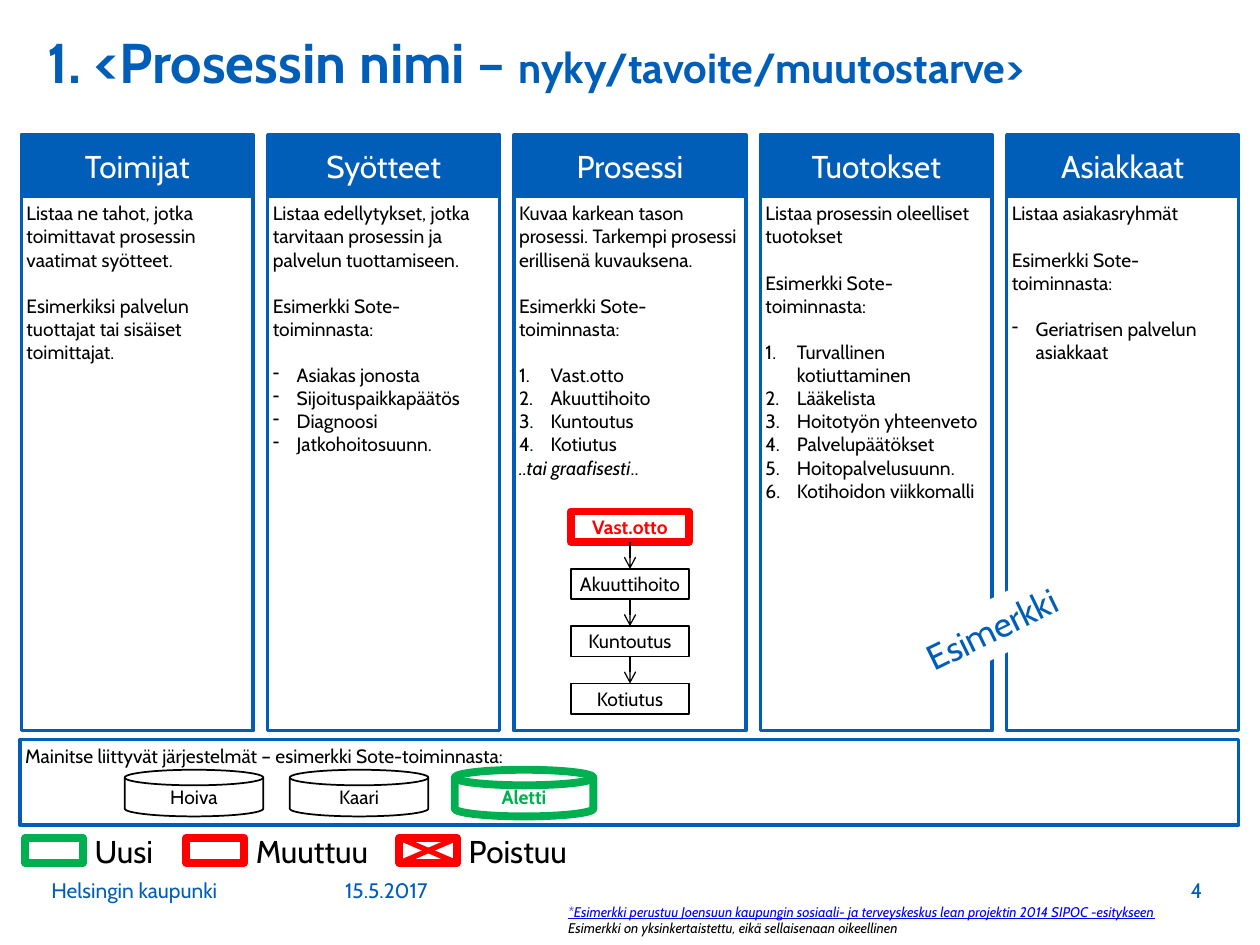
from dataclasses import dataclass

from lxml.etree import SubElement
from pptx import Presentation
from pptx.dml.color import RGBColor
from pptx.enum.dml import MSO_PATTERN
from pptx.enum.shapes import MSO_CONNECTOR, MSO_SHAPE
from pptx.enum.text import MSO_ANCHOR, PP_ALIGN
from pptx.oxml.ns import qn
from pptx.util import Inches, Pt

COLORS = {"blue": "005EB8", "white": "FFFFFF", "black": "000000",
          "green": "00B050", "red": "FF0000", "link": "0000FF"}
FONT = "Cabin"
SMALL_INSET = 0.04

# Grid of the five columns
LEFT, PITCH, COLUMN_WIDTH = 0.17, 1.955, 1.84
HEADER_TOP, HEADER_HEIGHT, BODY_HEIGHT = 1.07, 0.49, 4.24
LINE_GAP = 13.2  # one text line at 11 points


@dataclass
class Column:
    header: str
    intro: str
    example: str
    items: tuple = ()
    numbered: bool = False
    closing: tuple = ()


@dataclass
class Node:
    text: str
    color: str = "black"
    line_width: float = 1

    @property
    def bold(self) -> bool:
        return self.color != "black"


@dataclass
class LegendEntry:
    text: str
    left: float
    text_width: float
    color: str
    crossed: bool = False


EXAMPLE = "Esimerkki Sote-toiminnasta:"
COLUMNS = [
    Column("Toimijat", "Listaa ne tahot, jotka toimittavat prosessin vaatimat syötteet.",
           "Esimerkiksi palvelun tuottajat tai sisäiset toimittajat."),
    Column("Syötteet", "Listaa edellytykset, jotka tarvitaan prosessin ja palvelun tuottamiseen.",
           EXAMPLE, ("Asiakas jonosta", "Sijoituspaikkapäätös", "Diagnoosi", "Jatkohoitosuunn.")),
    Column("Prosessi", "Kuvaa karkean tason prosessi. Tarkempi prosessi erillisenä kuvauksena.",
           EXAMPLE, ("Vast.otto", "Akuuttihoito", "Kuntoutus", "Kotiutus"), True,
           ("..tai graafisesti", "..")),
    Column("Tuotokset", "Listaa prosessin oleelliset tuotokset", EXAMPLE,
           ("Turvallinen kotiuttaminen", "Lääkelista", "Hoitotyön yhteenveto",
            "Palvelupäätökset", "Hoitopalvelusuunn.", "Kotihoidon viikkomalli"), True),
    Column("Asiakkaat", "Listaa asiakasryhmät", EXAMPLE, ("Geriatrisen palvelun asiakkaat",)),
]
STEPS = [Node("Vast.otto", "red", 4.5), Node("Akuuttihoito"), Node("Kuntoutus"), Node("Kotiutus")]
SYSTEMS = [Node("Hoiva"), Node("Kaari"), Node("Aletti", "green", 4.5)]
LEGEND = [LegendEntry("Uusi", 0.2, 0.51, "green"), LegendEntry("Muuttuu", 1.48, 1.01, "red"),
          LegendEntry("Poistuu", 3.17, 0.88, "red", True)]


def rgb(name: str) -> RGBColor:
    return RGBColor.from_string(COLORS[name])


def add_run(paragraph, text: str, size=11, color="black", bold=False, italic=False,
            underline=False) -> None:
    run = paragraph.add_run()
    run.text = text
    font = run.font
    font.name, font.size = FONT, Pt(size)
    font.bold, font.italic, font.underline = bold, italic, underline
    font.color.rgb = rgb(color)


def add_paragraph(frame, text: str, align=PP_ALIGN.LEFT, before=0, **font):
    """Fill the empty first paragraph, or append a new one."""
    first = frame.paragraphs[0]
    paragraph = frame.add_paragraph() if first.runs else first
    paragraph.alignment, paragraph.space_before = align, Pt(before)
    add_run(paragraph, text, **font)
    return paragraph


def set_bullet(paragraph, numbered: bool) -> None:
    properties = paragraph._p.get_or_add_pPr()
    indent = Inches(0.25 if numbered else 0.19)
    properties.set("marL", str(indent))
    properties.set("indent", str(-indent))
    if numbered:
        SubElement(properties, qn("a:buAutoNum"), type="arabicPeriod")
    else:
        SubElement(properties, qn("a:buChar"), char="-")


def set_frame(frame, anchor=MSO_ANCHOR.TOP, inset=None, wrap=True) -> None:
    frame.vertical_anchor, frame.word_wrap = anchor, wrap
    if inset is not None:
        frame.margin_left = frame.margin_right = Inches(inset)
        frame.margin_top = frame.margin_bottom = Inches(inset)


def add_box(shapes, kind, left, top, width, height, fill="white", line=None, line_width=2.0,
            **frame_format):
    shape = shapes.add_shape(kind, *map(Inches, (left, top, width, height)))
    shape.shadow.inherit = False
    shape.fill.solid()
    shape.fill.fore_color.rgb = rgb(fill)
    if line:
        shape.line.color.rgb = rgb(line)
        shape.line.width = Pt(line_width)
    else:
        shape.line.fill.background()
    set_frame(shape.text_frame, **frame_format)
    return shape


def add_text(shapes, text, left, top, width, height, anchor=MSO_ANCHOR.TOP, inset=None,
             wrap=False, **text_format) -> None:
    box = shapes.add_textbox(*map(Inches, (left, top, width, height)))
    set_frame(box.text_frame, anchor, inset, wrap)
    add_paragraph(box.text_frame, text, **text_format)


def add_line(shapes, start, end, color="black", width=0.75, arrow=False) -> None:
    line = shapes.add_connector(MSO_CONNECTOR.STRAIGHT, *map(Inches, start + end))
    line.line.color.rgb = rgb(color)
    line.line.width = Pt(width)
    if arrow:
        SubElement(line.line._get_or_add_ln(), qn("a:tailEnd"), type="arrow")
    SubElement(line._element.spPr, qn("a:effectLst"))


def add_column(slide, index: int, column: Column) -> None:
    shapes = slide.shapes.add_group_shape().shapes
    left = LEFT + index * PITCH
    body = add_box(shapes, MSO_SHAPE.RECTANGLE, left, HEADER_TOP + HEADER_HEIGHT, COLUMN_WIDTH,
                   BODY_HEIGHT, line="blue", inset=SMALL_INSET)
    add_paragraph(body.text_frame, column.intro)
    add_paragraph(body.text_frame, column.example, before=LINE_GAP)
    for number, item in enumerate(column.items):
        paragraph = add_paragraph(body.text_frame, item, before=0 if number else LINE_GAP)
        set_bullet(paragraph, column.numbered)
    if column.closing:
        phrase, dots = column.closing
        add_run(add_paragraph(body.text_frame, phrase, italic=True), dots)
    header = add_box(shapes, MSO_SHAPE.RECTANGLE, left, HEADER_TOP, COLUMN_WIDTH, HEADER_HEIGHT,
                     fill="blue", line="blue", anchor=MSO_ANCHOR.MIDDLE, wrap=False)
    add_paragraph(header.text_frame, column.header, PP_ALIGN.CENTER, size=18, color="white")


def add_node(shapes, kind, node: Node, left, top, width, height) -> None:
    shape = add_box(shapes, kind, left, top, width, height, line=node.color,
                    line_width=node.line_width, anchor=MSO_ANCHOR.MIDDLE, inset=SMALL_INSET,
                    wrap=False)
    add_paragraph(shape.text_frame, node.text, PP_ALIGN.CENTER, color=node.color, bold=node.bold)


def add_legend_entry(shapes, entry: LegendEntry) -> None:
    top, width, height = 6.65, 0.46, 0.2
    right, bottom = entry.left + width, top + height
    box = add_box(shapes, MSO_SHAPE.RECTANGLE, entry.left, top, width, height,
                  line=entry.color, line_width=4.5)
    if entry.crossed:
        box.fill.patterned()
        box.fill.pattern = MSO_PATTERN.PERCENT_5
        box.fill.fore_color.rgb = box.fill.back_color.rgb = rgb("white")
        add_line(shapes, (entry.left, bottom), (right, top), entry.color, 3)
        add_line(shapes, (right, bottom), (entry.left, top), entry.color, 3)
    add_text(shapes, entry.text, entry.left + 0.55, 6.6, entry.text_width, 0.3, inset=0, size=18)


def main() -> None:
    presentation = Presentation()
    presentation.slide_width, presentation.slide_height = Inches(10), Inches(7.5)
    slide = presentation.slides.add_slide(presentation.slide_layouts[5])
    shapes = slide.shapes

    # Title
    title = shapes.title
    title.left, title.top, title.width, title.height = map(Inches, (0.28, 0.25, 9.22, 0.75))
    set_frame(title.text_frame)
    heading = add_paragraph(title.text_frame, "1. <Prosessin nimi – ", size=32, color="blue", bold=True)
    heading.line_spacing = 0.85
    add_run(heading, "nyky/tavoite/muutostarve>", size=24, color="blue", bold=True)

    # Footer
    footer = {"anchor": MSO_ANCHOR.BOTTOM, "wrap": True, "size": 12, "color": "blue"}
    add_text(shapes, "15.5.2017", 2.64, 6.82, 1.55, 0.39, **footer)
    add_text(shapes, "Helsingin kaupunki", 0.31, 6.7, 2.33, 0.51, **footer)
    add_text(shapes, "4", 8.46, 6.82, 1.18, 0.39, align=PP_ALIGN.RIGHT, **footer)

    # Columns
    for index, column in enumerate(COLUMNS):
        add_column(slide, index, column)

    # Related systems
    band = add_box(shapes, MSO_SHAPE.RECTANGLE, 0.16, 5.87, 9.67, 0.68, line="blue", inset=SMALL_INSET)
    add_paragraph(band.text_frame, "Mainitse liittyvät järjestelmät – esimerkki Sote-toiminnasta:")
    for index, system in enumerate(SYSTEMS):
        add_node(shapes, MSO_SHAPE.FLOWCHART_MAGNETIC_DISK, system, 0.99 + index * 1.31, 6.11, 1.1, 0.37)

    # Process flow
    first_top, step_pitch, step_height = 4.06, 0.455, 0.24
    for index, step in enumerate(STEPS):
        top = first_top + index * step_pitch
        add_node(shapes, MSO_SHAPE.RECTANGLE, step, 4.53, top, 0.94, step_height)
        if index:
            add_line(shapes, (5, top - step_pitch + step_height), (5, top), arrow=True)

    # Example stamp
    stamp = add_box(shapes, MSO_SHAPE.RECTANGLE, 7.21, 4.74, 1.46, 0.44, wrap=False)
    stamp.rotation = 334.1
    add_paragraph(stamp.text_frame, "Esimerkki", size=20, color="blue")

    # Source notes and legend
    note = {"inset": 0, "size": 8, "italic": True}
    add_text(shapes, "*Esimerkki perustuu Joensuun kaupungin sosiaali- ja terveyskeskus lean projektin "
             "2014 SIPOC -esitykseen", 4.51, 7.17, 5.49, 0.13, color="link", underline=True, **note)
    add_text(shapes, "Esimerkki on yksinkertaistettu, eikä sellaisenaan oikeellinen",
             4.51, 7.3, 3.1, 0.13, **note)
    for entry in LEGEND:
        add_legend_entry(shapes, entry)

    presentation.save("out.pptx")


if __name__ == "__main__":
    main()
